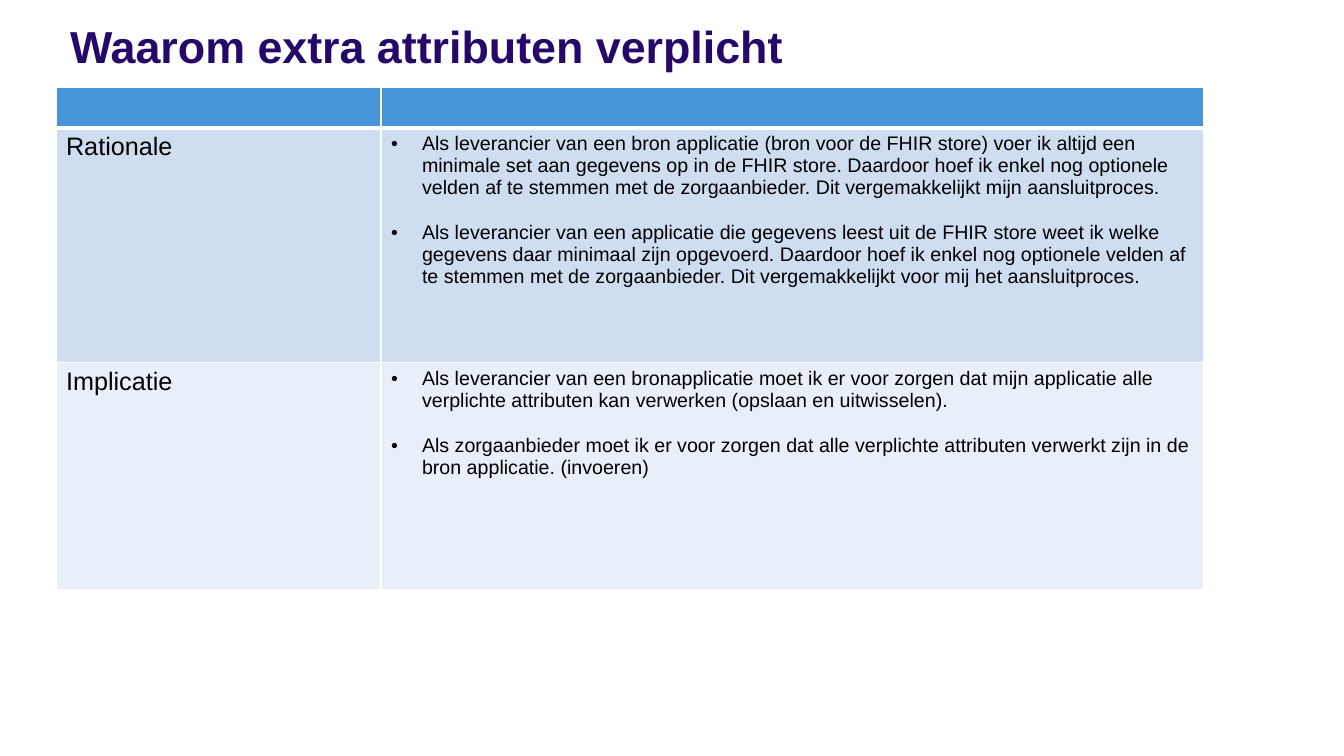
from lxml.etree import SubElement
from pptx import Presentation
from pptx.dml.color import RGBColor
from pptx.enum.text import MSO_ANCHOR, MSO_AUTO_SIZE, PP_ALIGN
from pptx.oxml.ns import qn
from pptx.util import Emu, Pt

# Palette
INDIGO = RGBColor(0x26, 0x08, 0x6B)
HEADER_BLUE = RGBColor(0x47, 0x95, 0xDB)
BAND_BLUE = RGBColor(0xCF, 0xDD, 0xF1)
PALE_BLUE = RGBColor(0xE9, 0xEF, 0xF8)
BLACK = RGBColor(0, 0, 0)
WHITE = RGBColor(0xFF, 0xFF, 0xFF)

# Wording
HEADING = "Waarom extra attributen verplicht"
RATIONALE = [
    "Als leverancier van een bron applicatie (bron voor de FHIR store) voer ik altijd een "
    "minimale set aan gegevens op in de FHIR store. Daardoor hoef ik enkel nog optionele "
    "velden af te stemmen met de zorgaanbieder. Dit vergemakkelijkt mijn aansluitproces.",
    "Als leverancier van een applicatie die gegevens leest uit de FHIR store weet ik welke "
    "gegevens daar minimaal zijn opgevoerd. Daardoor hoef ik enkel nog optionele velden af "
    "te stemmen met de zorgaanbieder. Dit vergemakkelijkt voor mij het aansluitproces.",
]
IMPLICATIE = [
    "Als leverancier van een bronapplicatie moet ik er voor zorgen dat mijn applicatie alle "
    "verplichte attributen kan verwerken (opslaan en uitwisselen).",
    "Als zorgaanbieder moet ik er voor zorgen dat alle verplichte attributen verwerkt zijn "
    "in de bron applicatie. (invoeren)",
]


def px(length):
    return Emu(round(length * 914400 / 100.8))


class SlideBuilder:
    font_name = "Arial"
    bullet_indent = 31

    def __init__(self, presentation):
        self.slide = presentation.slides.add_slide(presentation.slide_layouts[5])

    def style(self, paragraph, size, color, bold=False):
        font = paragraph.font
        font.name, font.size, font.bold = self.font_name, Pt(size), bold
        font.color.rgb = color

    def title(self, text, left, top, width, height):
        heading = self.slide.shapes.title
        heading.left, heading.top = px(left), px(top)
        heading.width, heading.height = px(width), px(height)
        frame = heading.text_frame
        frame.text = text
        frame.word_wrap = True
        frame.auto_size = MSO_AUTO_SIZE.NONE
        frame.vertical_anchor = MSO_ANCHOR.TOP
        frame.margin_left = frame.margin_right = frame.margin_top = frame.margin_bottom = 0
        line = frame.paragraphs[0]
        line.alignment = PP_ALIGN.LEFT
        line.line_spacing = Pt(36)
        self.style(line, 32, INDIGO, bold=True)

    def table(self, left, top, widths, heights):
        grid = self.slide.shapes.add_table(
            len(heights), len(widths), px(left), px(top), px(sum(widths)), px(sum(heights))
        ).table
        grid.horz_banding = False
        for column, width in zip(grid.columns, widths):
            column.width = px(width)
        for row, height in zip(grid.rows, heights):
            row.height = px(height)
        return grid

    def cell(self, cell, fill, top_border=1, bottom_border=1):
        properties = cell._tc.get_or_add_tcPr()
        borders = {"L": 1, "R": 1, "T": top_border, "B": bottom_border}
        for side, points in borders.items():
            line = SubElement(properties, qn(f"a:ln{side}"), w=str(Pt(points)))
            solid = SubElement(line, qn("a:solidFill"))
            SubElement(solid, qn("a:srgbClr"), val=str(WHITE))
        cell.fill.solid()
        cell.fill.fore_color.rgb = fill

    def label(self, cell, text):
        cell.text_frame.text = text
        self.style(cell.text_frame.paragraphs[0], 18, BLACK)

    def bullets(self, cell, items):
        cell.text_frame.text = "\n".join(items)
        for index, paragraph in enumerate(cell.text_frame.paragraphs):
            if index:
                paragraph.space_before = Pt(16)
            properties = paragraph._p.get_or_add_pPr()
            properties.set("marL", str(px(self.bullet_indent)))
            properties.set("indent", str(-px(self.bullet_indent)))
            SubElement(properties, qn("a:buFont"), typeface=self.font_name)
            SubElement(properties, qn("a:buChar"), char="•")
            self.style(paragraph, 14, BLACK)


def main():
    presentation = Presentation()
    presentation.slide_width, presentation.slide_height = px(1344), px(756)
    builder = SlideBuilder(presentation)

    # Heading
    builder.title(HEADING, 70, 22, 1185, 50)

    # Table with an empty header row
    arguments = builder.table(56, 87, widths=[325, 823], heights=[40, 235, 227])
    for header in arguments.rows[0].cells:
        builder.cell(header, HEADER_BLUE, bottom_border=3)

    # Rationale and implication rows
    topics = [
        ("Rationale", RATIONALE, BAND_BLUE, 3),
        ("Implicatie", IMPLICATIE, PALE_BLUE, 1),
    ]
    for row, (topic, points, fill, top_border) in enumerate(topics, start=1):
        topic_cell, points_cell = arguments.rows[row].cells
        for cell in (topic_cell, points_cell):
            builder.cell(cell, fill, top_border=top_border)
        builder.label(topic_cell, topic)
        builder.bullets(points_cell, points)

    presentation.save("out.pptx")


if __name__ == "__main__":
    main()
